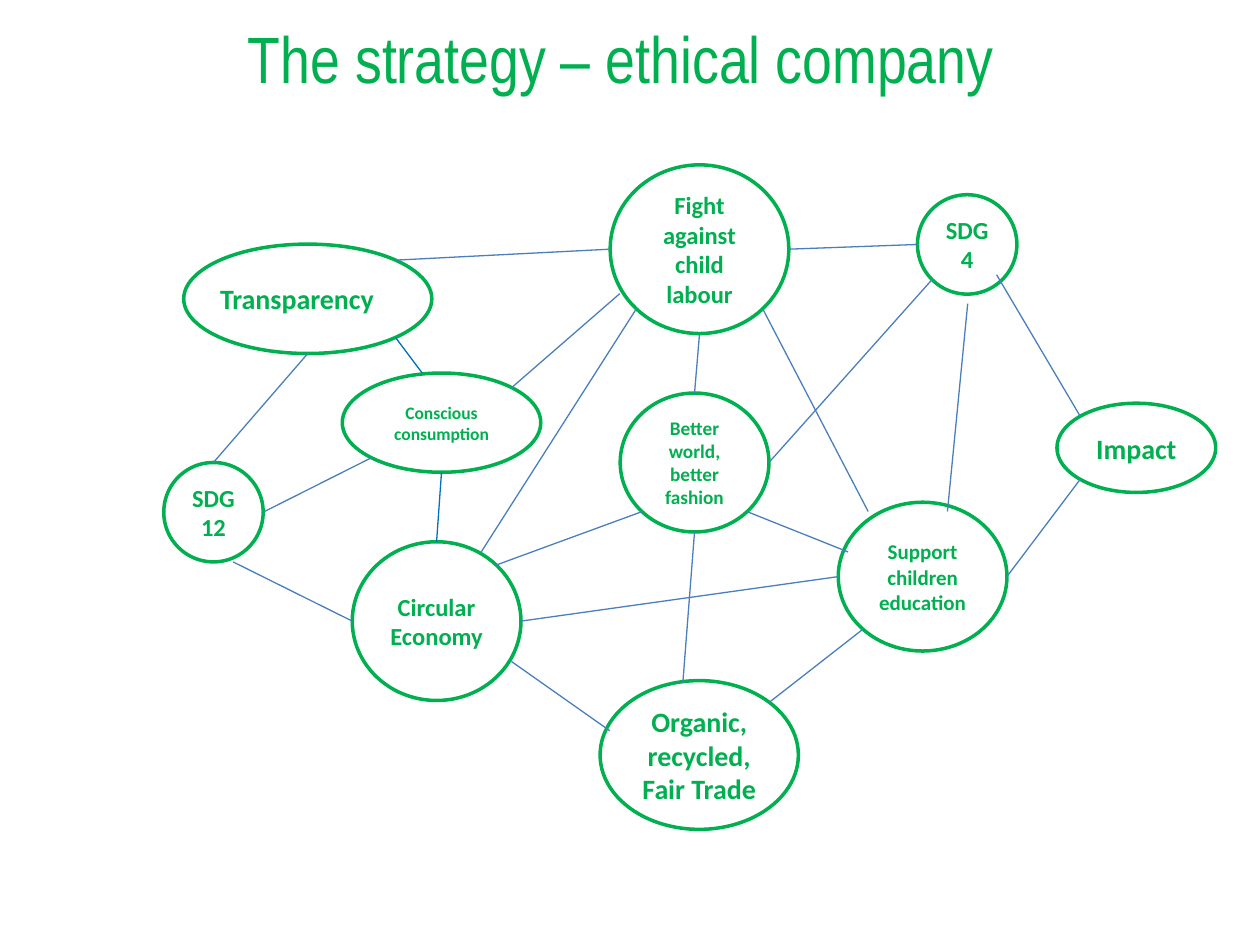
import math

import lxml.etree
import pptx
import pptx.dml.color
import pptx.enum.shapes
import pptx.enum.text
import pptx.oxml.ns
import pptx.util

Pt = pptx.util.Pt
GREEN, WHITE, STEEL, BLUE = "00B050", "FFFFFF", "4B7EBC", "0070C0"


def color(value):
    return pptx.dml.color.RGBColor.from_string(value)


deck = pptx.Presentation()
deck.slide_width, deck.slide_height = Pt(720), Pt(540)
page = deck.slides.add_slide(deck.slide_layouts[6])

ovals = {
    "sdg12": ("SDG12", 14, 93.6, 264.3, 56.8, 56.8),
    "transparency": ("Transparency", 16, 105, 139.5, 141.8, 62.5),
    "consumption": ("Conscious consumption", 10, 195.6, 213.2, 113.4, 56.7),
    "circular": ("Circular Economy", 14, 201.3, 309.6, 96.4, 90.7),
    "world": ("Better world, better fashion", 11, 354.4, 224.6, 85, 79.4),
    "labour": ("Fight against child labour", 14, 348.7, 94.2, 102.1, 96.4),
    "education": ("Support children education", 12, 479, 287, 96.4, 85),
    "sdg4": ("SDG4", 14, 524.3, 111.3, 56.8, 56.8),
    "organic": ("Organic, recycled, Fair Trade", 16, 342.9, 388.9, 113.3, 85),
    "impact": ("Impact", 16, 604, 230.4, 90.7, 51),
}

for name, (text, size, left, top, width, height) in ovals.items():
    oval = page.shapes.add_shape(
        pptx.enum.shapes.MSO_SHAPE.FLOWCHART_CONNECTOR,
        Pt(left), Pt(top), Pt(width), Pt(height))
    oval.shadow.inherit = False
    oval.fill.solid()
    oval.fill.fore_color.rgb = color(WHITE)
    oval.line.color.rgb = color(GREEN)
    oval.line.width = Pt(2)
    frame = oval.text_frame
    frame.word_wrap = True
    frame.vertical_anchor = pptx.enum.text.MSO_ANCHOR.MIDDLE
    frame.text = text
    para = frame.paragraphs[0]
    para.alignment = pptx.enum.text.PP_ALIGN.CENTER
    if name == "transparency":
        frame.margin_left = frame.margin_right = 0
        para.alignment = pptx.enum.text.PP_ALIGN.LEFT
    font = para.runs[0].font
    font.name, font.size, font.bold = "Calibri", Pt(size), True
    font.color.rgb = color(GREEN)

compass = ["e", "se", "s", "sw", "w", "nw", "n", "ne"]


def locate(end):
    if end[0] not in ovals:
        return end
    left, top, width, height = ovals[end[0]][2:]
    angle = compass.index(end[1]) * math.pi / 4
    return (left + width / 2 * (1 + math.cos(angle)),
            top + height / 2 * (1 + math.sin(angle)))


links = [
    (("transparency", "se"), (241.2, 213.1), BLUE),
    (("sdg12", "e"), ("consumption", "sw"), STEEL),
    (("consumption", "s"), ("circular", "n"), BLUE),
    (("circular", "ne"), ("world", "sw"), STEEL),
    (("labour", "s"), ("world", "n"), STEEL),
    ((569.5, 157), ("impact", "nw"), STEEL),
    (("sdg4", "sw"), ("world", "e"), STEEL),
    (("education", "w"), ("circular", "e"), STEEL),
    (("education", "e"), ("impact", "sw"), STEEL),
    ((133.2, 321.1), ("circular", "w"), STEEL),
    ((390.2, 390.2), ("world", "s"), STEEL),
    (("sdg12", "n"), ("transparency", "s"), STEEL),
    (("transparency", "ne"), ("labour", "w"), STEEL),
    ((553, 173.5), (541.4, 292.3), STEEL),
    (("labour", "sw"), (275, 315.4), STEEL),
    (("labour", "e"), ("sdg4", "w"), STEEL),
    ((292.3, 378), (348.5, 417.6), STEEL),
    (("education", "sw"), ("organic", "ne"), STEEL),
    (("world", "se"), (484.6, 315.4), STEEL),
    ((354.2, 167.8), ("consumption", "ne"), STEEL),
    (("labour", "se"), (496.1, 292.3), STEEL),
]

for start, finish, shade in links:
    points = [Pt(value) for value in (*locate(start), *locate(finish))]
    link = page.shapes.add_connector(
        pptx.enum.shapes.MSO_CONNECTOR.STRAIGHT, *points)
    link.line.color.rgb = color(shade)
    link.line.width = Pt(0.75)
    lxml.etree.SubElement(
        link.element.spPr, pptx.oxml.ns.qn("a:effectLst"))

title = page.shapes.add_textbox(Pt(31), Pt(15.1), Pt(648), Pt(43.9))
title.text_frame.word_wrap = True
title.text_frame.vertical_anchor = pptx.enum.text.MSO_ANCHOR.MIDDLE
title.text_frame.text = "The strategy – ethical company"
para = title.text_frame.paragraphs[0]
para.alignment = pptx.enum.text.PP_ALIGN.CENTER
para.line_spacing = 0.8
span = para.runs[0]
span.font.name, span.font.size = "Arial Narrow", Pt(37.4)
span.font.color.rgb = color(GREEN)

deck.save("out.pptx")
